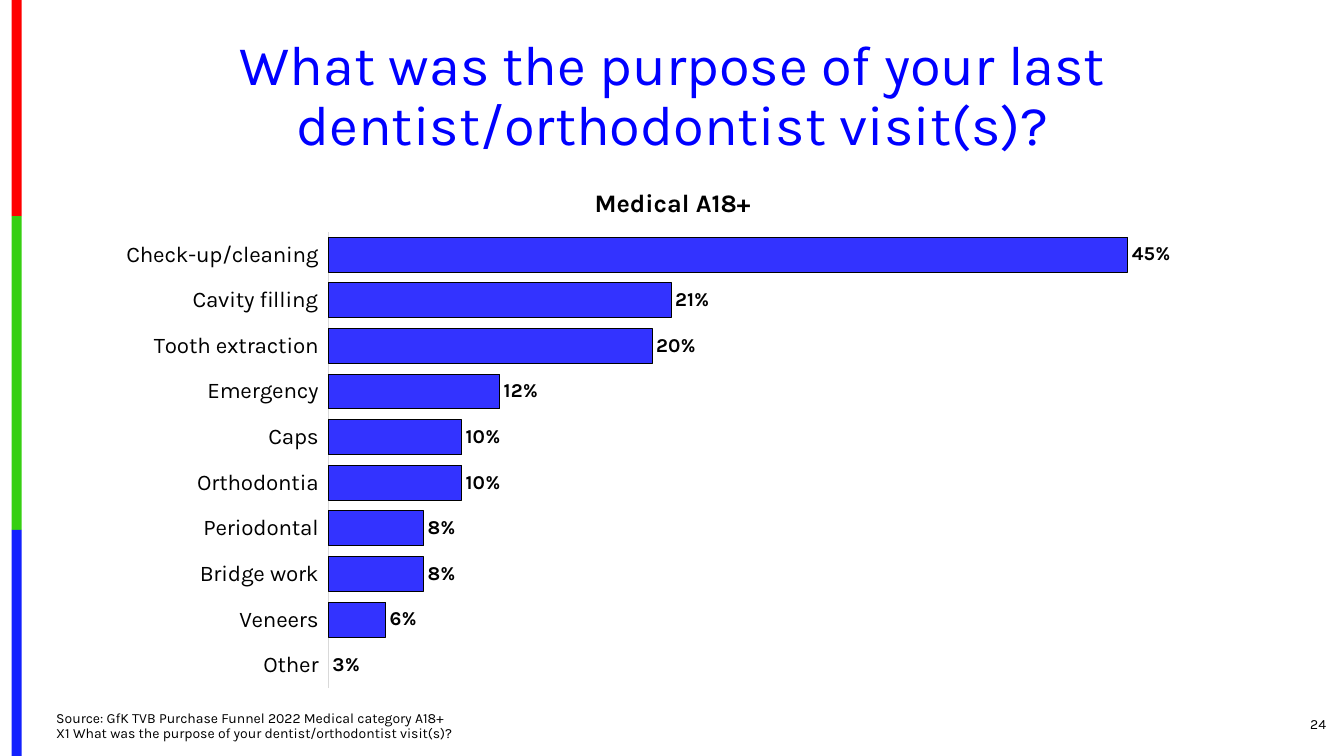
from dataclasses import dataclass

from lxml import etree
from pptx import Presentation
from pptx.chart.data import CategoryChartData
from pptx.dml.color import RGBColor
from pptx.enum.chart import XL_CHART_TYPE, XL_LABEL_POSITION, XL_TICK_LABEL_POSITION, XL_TICK_MARK
from pptx.enum.shapes import MSO_SHAPE
from pptx.enum.text import MSO_ANCHOR, PP_ALIGN
from pptx.oxml.ns import qn
from pptx.util import Inches, Pt

BAR_CLUSTERED = XL_CHART_TYPE.BAR_CLUSTERED
OUTSIDE_END = XL_LABEL_POSITION.OUTSIDE_END
LABELS_LOW = XL_TICK_LABEL_POSITION.LOW
NO_TICK = XL_TICK_MARK.NONE
RECTANGLE = MSO_SHAPE.RECTANGLE
LEFT, CENTER, RIGHT = PP_ALIGN.LEFT, PP_ALIGN.CENTER, PP_ALIGN.RIGHT
TOP, MIDDLE, BOTTOM = MSO_ANCHOR.TOP, MSO_ANCHOR.MIDDLE, MSO_ANCHOR.BOTTOM

FONT = "Karla"
BLACK = RGBColor(0x00, 0x00, 0x00)
TITLE_BLUE = RGBColor(0x00, 0x00, 0xFF)
BAR_BLUE = RGBColor(0x33, 0x33, 0xFF)
AXIS_GREY = RGBColor(0xD9, 0xD9, 0xD9)
STRIP_RED = RGBColor(0xFE, 0x00, 0x00)
STRIP_GREEN = RGBColor(0x36, 0xCF, 0x12)
STRIP_BLUE = RGBColor(0x13, 0x22, 0xFE)

# The slide is a grid of 100 columns by 100 rows
WIDTH, HEIGHT = Inches(13.33), Inches(7.5)
COL, ROW = WIDTH / 100, HEIGHT / 100


@dataclass(frozen=True)
class Box:
    col: float
    row: float
    cols: float
    rows: float

    def emu(self) -> tuple[int, int, int, int]:
        return (round(self.col * COL), round(self.row * ROW),
                round(self.cols * COL), round(self.rows * ROW))


@dataclass(frozen=True)
class Strip:
    end_row: float
    color: RGBColor


STRIPS = [Strip(28.6, STRIP_RED), Strip(70.1, STRIP_GREEN), Strip(100, STRIP_BLUE)]

# Visit purposes, from the bottom bar up
PURPOSES = {
    "Other": 0.03, "Veneers": 0.06, "Bridge work": 0.08, "Periodontal": 0.08,
    "Orthodontia": 0.10, "Caps": 0.10, "Emergency": 0.12,
    "Tooth extraction": 0.20, "Cavity filling": 0.21, "Check-up/cleaning": 0.45,
}


def style_font(font, size: float, color: RGBColor = BLACK, bold: bool = False) -> None:
    font.name, font.size, font.bold = FONT, Pt(size), bold
    font.color.rgb = color


def add_text(slide, box: Box, text: str, *, size: float, color: RGBColor = BLACK,
             bold: bool = False, align=LEFT, anchor=TOP, spacing: float = 1.0) -> None:
    tf = slide.shapes.add_textbox(*box.emu()).text_frame
    tf.word_wrap = True
    tf.vertical_anchor = anchor
    p = tf.paragraphs[0]
    p.text = text
    p.alignment, p.line_spacing = align, spacing
    for r in p.runs:
        style_font(r.font, size, color, bold)


def add_strips(slide) -> None:
    row = 0
    for strip in STRIPS:
        sp = slide.shapes.add_shape(RECTANGLE, *Box(0.86, row, 0.75, strip.end_row - row).emu())
        sp.shadow.inherit = False
        sp.fill.solid()
        sp.fill.fore_color.rgb = strip.color
        sp.line.fill.background()
        row = strip.end_row


def set_plot_layout(chart, x: float, y: float, w: float, h: float) -> None:
    area = chart.element.find(".//" + qn("c:plotArea"))
    for old in area.findall(qn("c:layout")):
        area.remove(old)
    layout = etree.Element(qn("c:layout"))
    manual = etree.SubElement(layout, qn("c:manualLayout"))
    settings = {"layoutTarget": "inner", "xMode": "edge", "yMode": "edge",
                "x": x, "y": y, "w": w, "h": h}
    for name, value in settings.items():
        etree.SubElement(manual, qn("c:" + name)).set("val", str(value))
    area.insert(0, layout)


def add_purpose_chart(slide, box: Box) -> None:
    data = CategoryChartData(number_format="0%")
    data.categories = list(PURPOSES)
    data.add_series("Series 1", list(PURPOSES.values()))
    chart = slide.shapes.add_chart(BAR_CLUSTERED, *box.emu(), data).chart
    chart.has_title = chart.has_legend = False
    style_font(chart.font, 10)
    set_plot_layout(chart, 0.184, 0.11, 0.661, 0.843)

    # Axes
    cat = chart.category_axis
    cat.major_tick_mark = cat.minor_tick_mark = NO_TICK
    cat.tick_label_position = LABELS_LOW
    cat.has_major_gridlines = False
    cat.format.line.color.rgb = AXIS_GREY
    cat.format.line.width = Pt(0.75)
    style_font(cat.tick_labels.font, 16)
    val = chart.value_axis
    val.minimum_scale, val.maximum_scale = 0.03, 0.45
    val.has_major_gridlines = False
    val.visible = False

    # Bars and their labels
    plot = chart.plots[0]
    plot.gap_width = 31
    plot.vary_by_categories = False
    bars = plot.series[0]
    bars.invert_if_negative = False
    bars.format.fill.solid()
    bars.format.fill.fore_color.rgb = BAR_BLUE
    bars.format.line.color.rgb = BLACK
    bars.format.line.width = Pt(0.75)
    labels = bars.data_labels
    labels.show_value = True
    labels.number_format, labels.number_format_is_linked = "0%", False
    labels.position = OUTSIDE_END
    style_font(labels.font, 14, bold=True)


def main() -> None:
    prs = Presentation()
    prs.slide_width, prs.slide_height = WIDTH, HEIGHT
    slide = prs.slides.add_slide(prs.slide_layouts[6])

    add_strips(slide)
    add_text(slide, Box(3.45, 4.13, 93.17, 17.47),
             "What was the purpose of your last dentist/orthodontist visit(s)?",
             size=40, color=TITLE_BLUE, align=CENTER, anchor=MIDDLE, spacing=0.9)
    add_purpose_chart(slide, Box(7.88, 22.8, 90, 71.6))
    add_text(slide, Box(42.09, 24.13, 15.9, 5.33), "Medical A18+",
             size=18, bold=True, align=CENTER)

    # Footer
    add_text(slide, Box(91.3, 93.07, 8.1, 5.33), "24", size=10, align=RIGHT, anchor=MIDDLE)
    add_text(slide, Box(3.45, 93.47, 70.89, 5.33),
             "Source: GfK TVB Purchase Funnel 2022 Medical category A18+\v"
             "X1 What was the purpose of your dentist/orthodontist visit(s)?",
             size=10, anchor=BOTTOM, spacing=0.9)

    prs.save("out.pptx")


if __name__ == "__main__":
    main()
